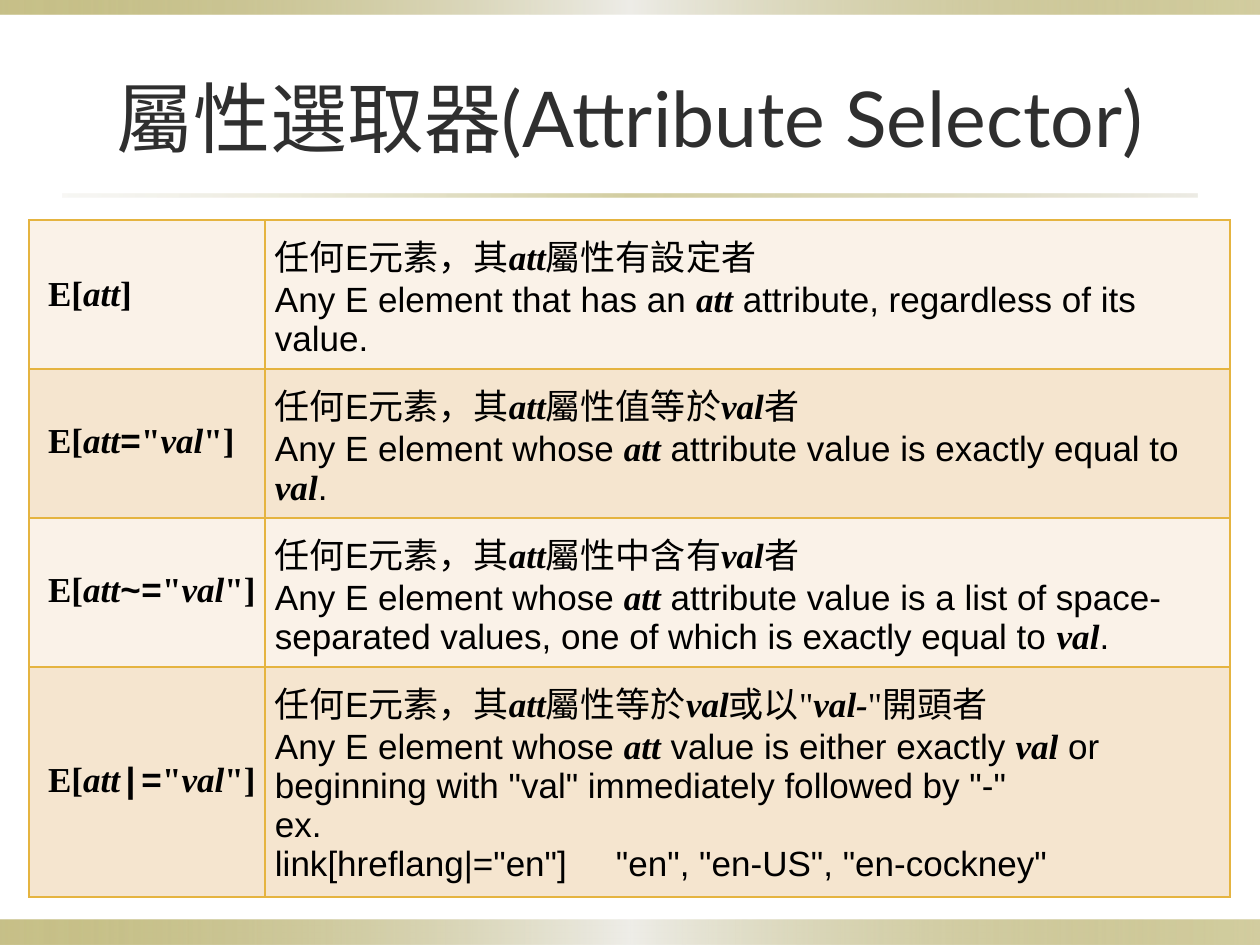
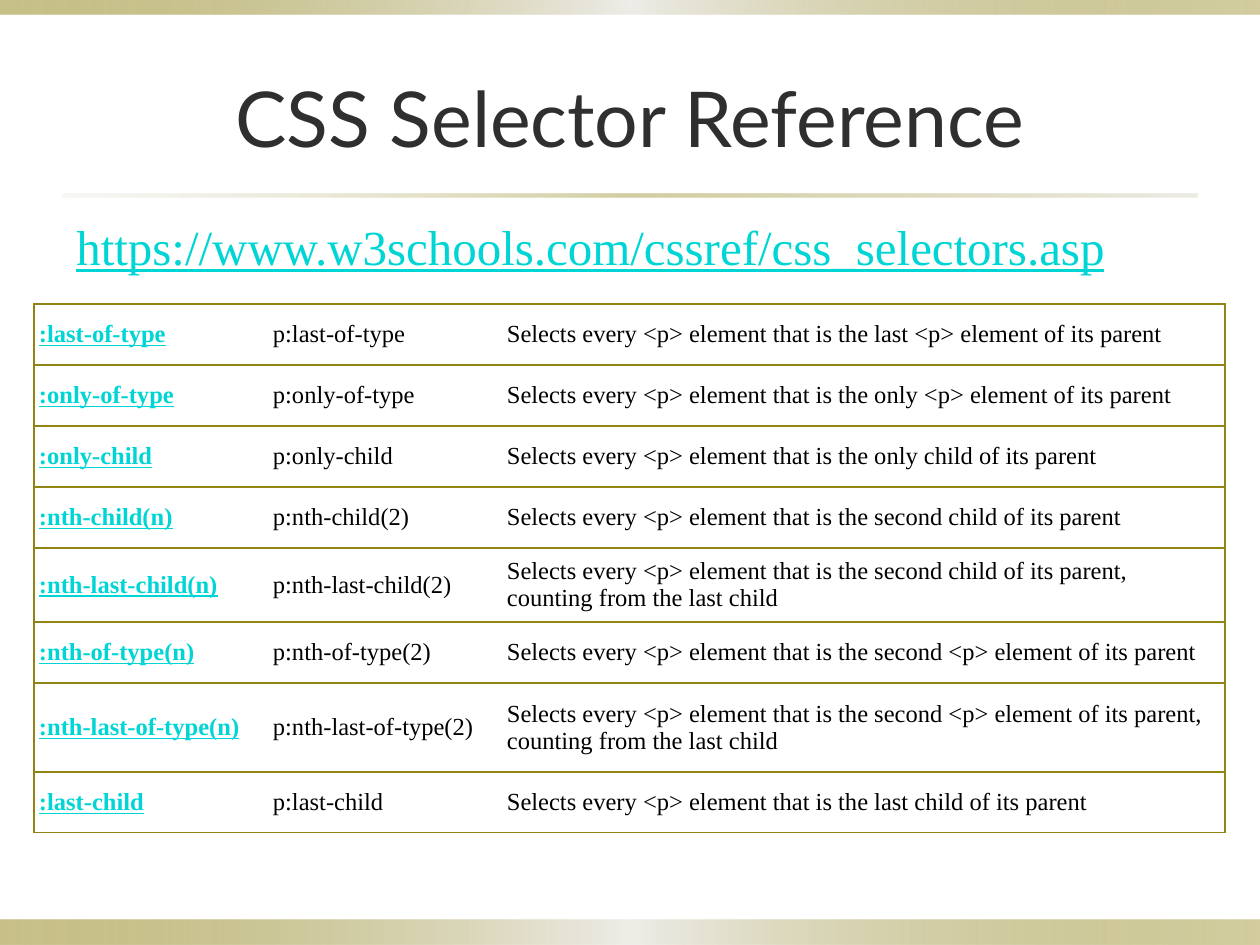
"""Build two slides on CSS attribute selectors and the selector reference."""
from lxml.etree import SubElement
from pptx import Presentation
from pptx.dml.color import RGBColor
from pptx.enum.shapes import MSO_SHAPE
from pptx.enum.text import MSO_ANCHOR, PP_ALIGN
from pptx.oxml.ns import qn
from pptx.util import Inches, Pt

PX = Inches(1) // 126
INK = RGBColor(0x2F, 0x2F, 0x2F)
BLACK = RGBColor(0x00, 0x00, 0x00)
WHITE = RGBColor(0xFF, 0xFF, 0xFF)
OLIVE = RGBColor(0x91, 0x84, 0x15)
MIST = RGBColor(0xEE, 0xED, 0xE8)
SAND = RGBColor(0xDC, 0xD9, 0xCC)
GOLD = RGBColor(0xE5, 0xB4, 0x40)
CREAM = RGBColor(0xFA, 0xF2, 0xE8)
PEACH = RGBColor(0xF5, 0xE5, 0xCF)
LINK = RGBColor(0x00, 0xD5, 0xD5)
SERIF = "Times New Roman"


def write(frame, lines, *, tab=None, align=PP_ALIGN.LEFT, color=BLACK, **base):
    for index, pieces in enumerate(lines):
        paragraph = frame.add_paragraph() if index else frame.paragraphs[0]
        paragraph.alignment = align
        if tab:
            stops = SubElement(paragraph._p.get_or_add_pPr(), qn("a:tabLst"))
            SubElement(stops, qn("a:tab"), pos=str(tab * PX), algn="l")
        for piece in [pieces] if isinstance(pieces, str) else pieces:
            text, changes = (piece, {}) if isinstance(piece, str) else piece
            run = paragraph.add_run()
            run.text = text
            run.font.color.rgb = color
            for key, value in {**base, **changes}.items():
                setattr(run.font, key, value)


def add_grid(slide, left, top, widths, heights, fills, border, inner_verticals, margins):
    grid = slide.shapes.add_table(
        len(heights), len(widths), left * PX, top * PX, sum(widths) * PX, sum(heights) * PX
    ).table
    grid.first_row = grid.horz_banding = False
    for column, width in zip(grid.columns, widths):
        column.width = width * PX
    for number, (row, height) in enumerate(zip(grid.rows, heights)):
        row.height = height * PX
        for place, cell in enumerate(row.cells):
            cell.margin_left = cell.margin_right = margins[0] * PX
            cell.margin_top = cell.margin_bottom = margins[1] * PX
            cell.vertical_anchor = MSO_ANCHOR.MIDDLE
            drawn = {
                "a:lnL": inner_verticals or place == 0,
                "a:lnR": inner_verticals or place == len(widths) - 1,
                "a:lnT": True,
                "a:lnB": True,
            }
            for edge, visible in drawn.items():
                line = SubElement(cell._tc.get_or_add_tcPr(), qn(edge), w=str(Pt(1)))
                if visible:
                    solid = SubElement(line, qn("a:solidFill"))
                    SubElement(solid, qn("a:srgbClr"), val=str(border))
                else:
                    SubElement(line, qn("a:noFill"))
            cell.fill.solid()
            cell.fill.fore_color.rgb = fills[number % len(fills)]
    return grid


deck = Presentation()
deck.slide_width, deck.slide_height = 1260 * PX, 945 * PX

BAND_STOPS = [(0, OLIVE, 50), (50, MIST, 100), (100, OLIVE, 40)]
RULE_STOPS = [(0, SAND, 20), (50, OLIVE, 40), (100, SAND, 50)]
DECOR = [
    ((0, 920, 1260, 25), [(0, OLIVE, 50), (50, MIST, 100), (100, OLIVE, 40)]),
    ((0, 0, 1260, 15), BAND_STOPS),
    ((63, 194, 1134, 3), RULE_STOPS),
]
DECOR[0] = (DECOR[0][0], BAND_STOPS)

slides = []
for heading in ["屬性選取器(Attribute Selector)", "CSS Selector Reference"]:
    slide = deck.slides.add_slide(deck.slide_layouts[6])
    slides.append(slide)
    for place, stops in DECOR:
        band = slide.shapes.add_shape(MSO_SHAPE.RECTANGLE, *[n * PX for n in place])
        band.shadow.inherit = False
        band.line.fill.background()
        band.fill.gradient()
        band.fill.gradient_angle = 0
        stop_list = band._element.spPr.find(".//" + qn("a:gsLst"))
        stop_list.clear()
        for position, color, opacity in stops:
            stop = SubElement(stop_list, qn("a:gs"), pos=str(position * 1000))
            tone = SubElement(stop, qn("a:srgbClr"), val=str(color))
            SubElement(tone, qn("a:alpha"), val=str(opacity * 1000))
    title = slide.shapes.add_textbox(63 * PX, 38 * PX, 1134 * PX, 157 * PX).text_frame
    title.word_wrap = True
    title.vertical_anchor = MSO_ANCHOR.MIDDLE
    write(title, [heading], align=PP_ALIGN.CENTER, color=INK, name="Lato", size=Pt(44))

attribute_slide, reference_slide = slides

EMPHASIS = {"name": SERIF, "bold": True, "italic": True}
ATT, VAL, VAL_DASH = [(word, EMPHASIS) for word in ("att", "val", "val-")]
QUOTE = ('"', {"name": SERIF})
ANY_E = "任何E元素，其"
WHOSE = "Any E element whose "
attribute_selectors = [
    ("", [
        [ANY_E, ATT, "屬性有設定者"],
        ["Any E element that has an ", ATT, " attribute, regardless of its value."],
    ]),
    ("=", [
        [ANY_E, ATT, "屬性值等於", VAL, "者"],
        [WHOSE, ATT, " attribute value is exactly equal to ", VAL, "."],
    ]),
    ("~=", [
        [ANY_E, ATT, "屬性中含有", VAL, "者"],
        [WHOSE, ATT, " attribute value is a list of space-separated values, "
         "one of which is exactly equal to ", VAL, "."],
    ]),
    ("|=", [
        [ANY_E, ATT, "屬性等於", VAL, "或以", QUOTE, VAL_DASH, QUOTE, "開頭者"],
        [WHOSE, ATT, " value is either exactly ", VAL,
         ' or beginning with "val" immediately followed by "-"'],
        "ex.",
        'link[hreflang|="en"]\t"en", "en-US", "en-cockney"',
    ]),
]
attribute_grid = add_grid(attribute_slide, 29, 220, [236, 965], [149, 149, 149, 230],
                          [CREAM, PEACH], GOLD, True, (10, 10))
for row, (operator, meaning) in zip(attribute_grid.rows, attribute_selectors):
    pattern, description = row.cells
    pattern.margin_left = 19 * PX
    pattern.margin_right = 5 * PX
    description.vertical_anchor = MSO_ANCHOR.TOP
    selector = ["E[", ATT]
    if operator:
        selector += [(operator, {"name": "Courier New"}), '"', VAL, '"']
    write(pattern.text_frame, [selector + ["]"]], name=SERIF, size=Pt(20), bold=True)
    write(description.text_frame, meaning, tab=341, name="Arial", size=Pt(20))

address = reference_slide.shapes.add_textbox(64 * PX, 210 * PX, 1134 * PX, 70 * PX).text_frame
address.word_wrap = True
write(address, ["https://www.w3schools.com/cssref/css_selectors.asp"],
      color=LINK, name=SERIF, size=Pt(28), underline=True)

FROM_LAST = ", counting from the last child"
pseudo_classes = [
    (":last-of-type", "", "last <p> element of its parent"),
    (":only-of-type", "", "only <p> element of its parent"),
    (":only-child", "", "only child of its parent"),
    (":nth-child", "2", "second child of its parent"),
    (":nth-last-child", "2", "second child of its parent" + FROM_LAST),
    (":nth-of-type", "2", "second <p> element of its parent"),
    (":nth-last-of-type", "2", "second <p> element of its parent" + FROM_LAST),
    (":last-child", "", "last child of its parent"),
]
reference_grid = add_grid(reference_slide, 34, 304, [234, 234, 723],
                          [61, 61, 61, 61, 74, 61, 89, 61], [WHITE], OLIVE, False, (5, 3))
for row, (pseudo, index, target) in zip(reference_grid.rows, pseudo_classes):
    selector, example, description = [cell.text_frame for cell in row.cells]
    write(selector, [pseudo + ("(n)" if index else "")],
          color=LINK, name=SERIF, size=Pt(14), bold=True, underline=True)
    write(example, [f"p{pseudo}" + (f"({index})" if index else "")], name=SERIF, size=Pt(14))
    write(description, [f"Selects every <p> element that is the {target}"],
          name=SERIF, size=Pt(14))

deck.save("out.pptx")
